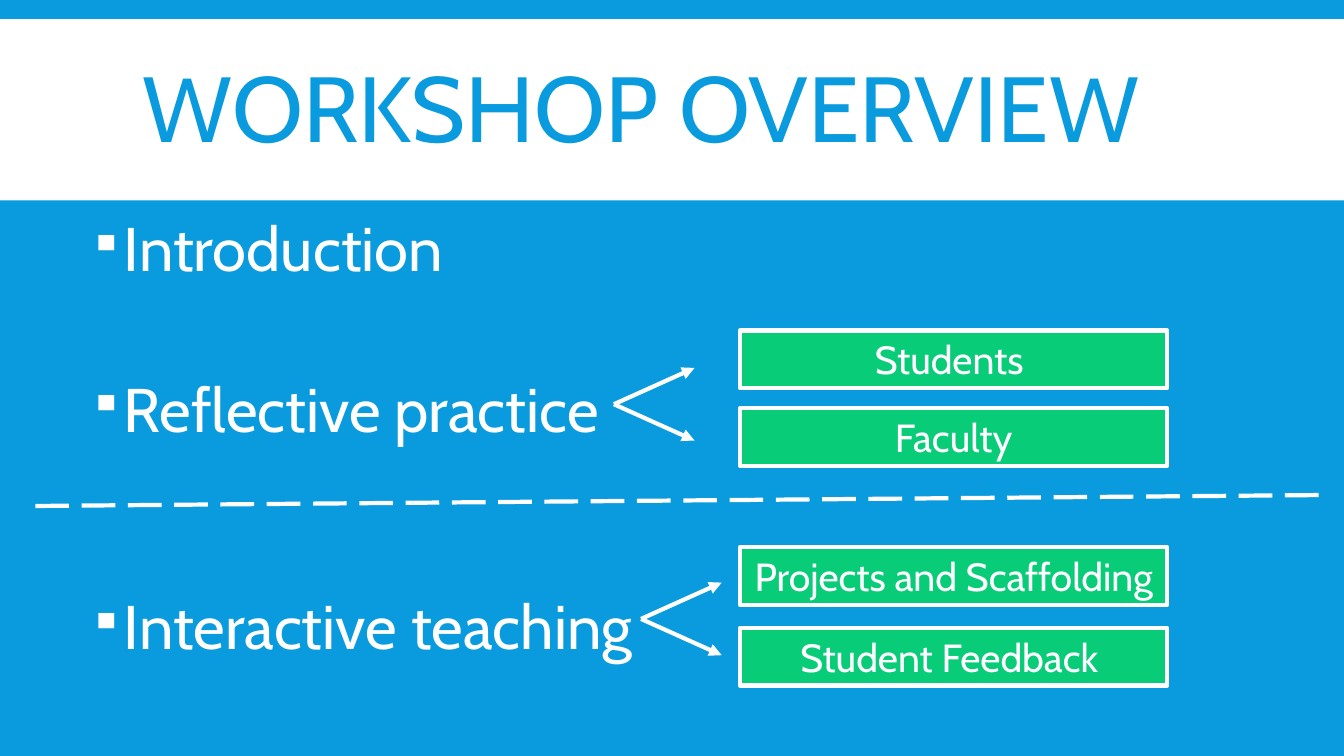
"""Build the workshop overview slide with its topics and branching subtopics."""
import pptx
import pptx.dml.color
import pptx.enum.dml
import pptx.enum.shapes
import pptx.enum.text
import pptx.oxml
import pptx.oxml.ns
import pptx.util

COLORS = {"blue": "099BDD", "green": "08CC78", "white": "FFFFFF"}
FONT = "Cabin"
SLIDE_WIDTH = pptx.util.Inches(13.33)
SLIDE_HEIGHT = pptx.util.Inches(7.5)
COLUMN = SLIDE_WIDTH / 100
ROW = SLIDE_HEIGHT / 100

TOPICS = [("Introduction", 0), ("Reflective practice", 67), ("Interactive teaching", 108)]
SUBTOPICS = [
    ("Students ", 43.73),
    ("Faculty", 54),
    ("Projects and Scaffolding", 72.4),
    ("Student Feedback ", 83.07),
]
FORKS = [(45.68, 53.47), (47.7, 81.87)]
FORK_REACH, FORK_SPREAD = 6, 4.8


def grid(left, top, width, height):
    """Convert columns and rows to slide lengths."""
    return int(left * COLUMN), int(top * ROW), int(width * COLUMN), int(height * ROW)


def color(name):
    """Return the named palette colour."""
    return pptx.dml.color.RGBColor.from_string(COLORS[name])


def style_runs(paragraph, size, ink):
    """Format every run of a paragraph."""
    for run in paragraph.runs:
        run.font.name = FONT
        run.font.size = pptx.util.Pt(size)
        run.font.color.rgb = color(ink)


def add_panel(slide, area, fill, outline=None):
    """Add a flat rectangle, with a thick border if an outline is named."""
    panel = slide.shapes.add_shape(pptx.enum.shapes.MSO_SHAPE.RECTANGLE, *grid(*area))
    panel.shadow.inherit = False
    panel.fill.solid()
    panel.fill.fore_color.rgb = color(fill)
    if outline:
        panel.line.color.rgb = color(outline)
        panel.line.width = pptx.util.Pt(3)
    else:
        panel.line.fill.background()
    return panel


def add_title(slide, wording):
    """Add the heading inside the white band."""
    heading = slide.shapes.add_textbox(*grid(9.9, 4.13, 80.25, 22)).text_frame
    heading.word_wrap = True
    heading.vertical_anchor = pptx.enum.text.MSO_ANCHOR.MIDDLE
    heading.text = wording
    heading.paragraphs[0].line_spacing = 0.85
    style_runs(heading.paragraphs[0], 66, "blue")


def add_bullet(paragraph):
    """Give a paragraph a small white square bullet with a hanging indent."""
    properties = paragraph._p.get_or_add_pPr()
    indent = pptx.util.Inches(0.35)
    properties.set("marL", str(indent))
    properties.set("indent", str(-indent))
    namespace = pptx.oxml.ns.nsdecls("a")
    for markup in (
        f'<a:buClr {namespace}><a:srgbClr val="{COLORS["white"]}"/></a:buClr>',
        f'<a:buSzPct {namespace} val="77000"/>',
        f'<a:buChar {namespace} char="▪"/>',
    ):
        properties.append(pptx.oxml.parse_xml(markup))


def add_topics(slide):
    """Add the bulleted list of topics."""
    agenda = slide.shapes.add_textbox(*grid(5.85, 28.27, 84.23, 66)).text_frame
    agenda.word_wrap = True
    for index, (topic, gap) in enumerate(TOPICS):
        entry = agenda.add_paragraph() if index else agenda.paragraphs[0]
        entry.text = topic
        entry.line_spacing = 0.9
        entry.space_before = pptx.util.Pt(gap)
        add_bullet(entry)
        style_runs(entry, 44, "white")


def add_subtopic(slide, wording, top):
    """Add a green labelled box."""
    label = add_panel(slide, (55.05, top, 31.8, 7.6), "green", "white").text_frame
    label.word_wrap = True
    label.text = wording
    label.paragraphs[0].alignment = pptx.enum.text.PP_ALIGN.CENTER
    style_runs(label.paragraphs[0], 28, "white")


def add_stroke(slide, start, end):
    """Add a white straight line between two grid points."""
    stroke = slide.shapes.add_connector(
        pptx.enum.shapes.MSO_CONNECTOR.STRAIGHT, *grid(*start, *end)
    )
    stroke.line.color.rgb = color("white")
    stroke.line.width = pptx.util.Pt(3)
    stroke._element.spPr.append(
        pptx.oxml.parse_xml(f'<a:effectLst {pptx.oxml.ns.nsdecls("a")}/>')
    )
    return stroke


def add_fork(slide, column, row):
    """Add two arrows that spread from one point."""
    for spread in (-FORK_SPREAD, FORK_SPREAD):
        arrow = add_stroke(slide, (column, row), (column + FORK_REACH, row + spread))
        arrow.line._get_or_add_ln().append(
            pptx.oxml.parse_xml(f'<a:tailEnd {pptx.oxml.ns.nsdecls("a")} type="triangle"/>')
        )


def main():
    """Assemble and save the slide."""
    deck = pptx.Presentation()
    deck.slide_width, deck.slide_height = SLIDE_WIDTH, SLIDE_HEIGHT
    slide = deck.slides.add_slide(deck.slide_layouts[6])
    slide.background.fill.solid()
    slide.background.fill.fore_color.rgb = color("blue")

    add_panel(slide, (0, 2.53, 100, 24), "white")
    add_title(slide, "WORKSHOP OVERVIEW")
    add_topics(slide)
    for wording, top in SUBTOPICS:
        add_subtopic(slide, wording, top)
    for column, row in FORKS:
        add_fork(slide, column, row)
    divider = add_stroke(slide, (2.63, 66.93), (99, 65.47))
    divider.line.dash_style = pptx.enum.dml.MSO_LINE.LONG_DASH

    deck.save("out.pptx")


if __name__ == "__main__":
    main()
